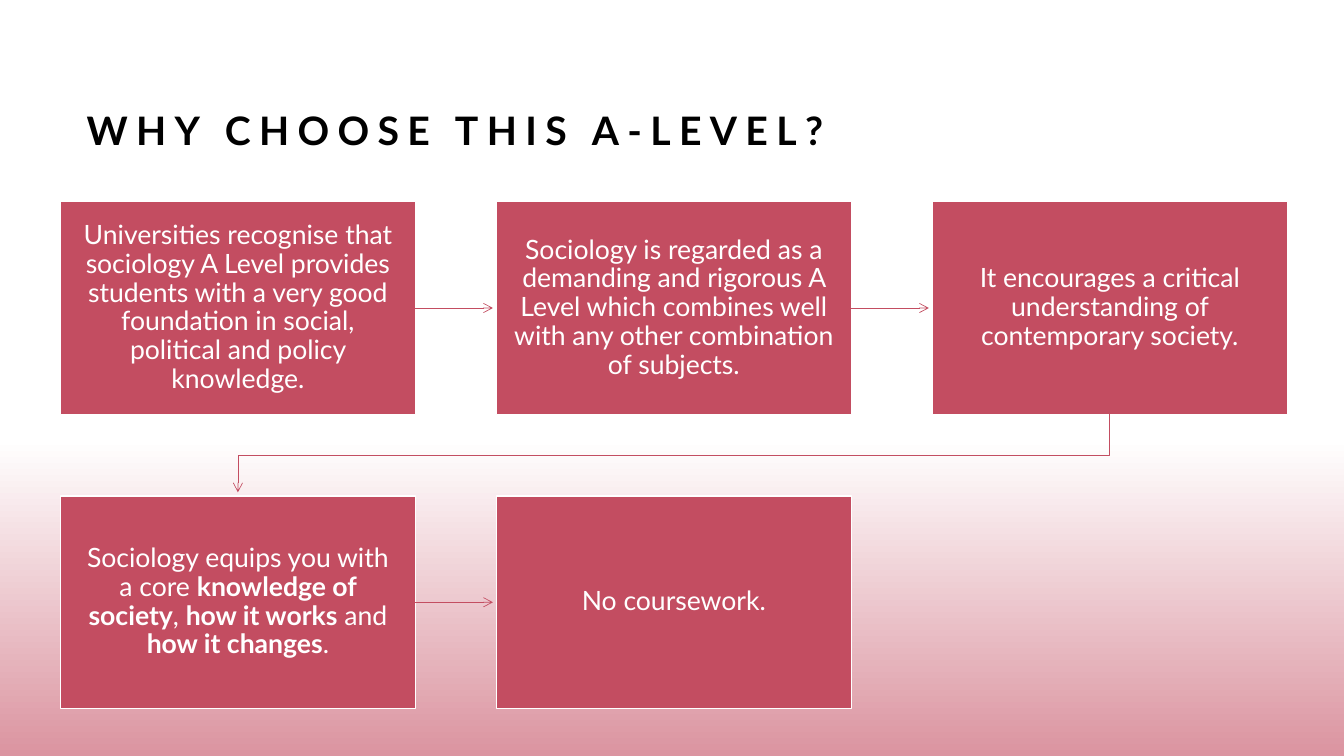
"""Builds a slide of five linked reasons to choose sociology A Level."""
from lxml.etree import SubElement
from pptx import Presentation
from pptx.dml.color import RGBColor
from pptx.enum.shapes import MSO_CONNECTOR as Connector, MSO_SHAPE as Shape
from pptx.enum.text import MSO_ANCHOR as Anchor, MSO_AUTO_SIZE as AutoSize, PP_ALIGN as Align
from pptx.oxml.ns import qn
from pptx.util import Pt

TITLE = "WHY CHOOSE THIS A-LEVEL?"
REASONS = [
    [("Universities recognise that sociology A Level provides students with a very good "
      "foundation in social, political and policy knowledge.", False)],
    [("Sociology is regarded as a demanding and rigorous A Level which combines well "
      "with any other combination of subjects.", False)],
    [("It encourages a critical understanding of contemporary society.", False)],
    [("Sociology equips you with a core ", False), ("knowledge of society", True),
     (", ", False), ("how it works", True), (" and ", False),
     ("how it changes", True), (".", False)],
    [("No coursework.", False)],
]
COLORS = {"rose": "C34D61", "blush": "DB94A0", "white": "FFFFFF", "black": "000000"}
FONT = "Lato"
SLIDE_W, SLIDE_H = 960, 540
FADE_TOP = 276.5
COLUMNS = 3
LEFT, TOP = 43.2, 144
BOX_W, BOX_H = 253.5, 152
STEP_X, STEP_Y = 311.4, 210.2
ARROW_GAP = 2.5


def color(name):
    return RGBColor.from_string(COLORS[name])


def style_arrow(arrow):
    arrow.line.color.rgb = color("rose")
    arrow.line.width = Pt(0.5)
    properties = arrow._element.spPr
    SubElement(properties.find(qn("a:ln")), qn("a:tailEnd"), type="arrow")
    SubElement(properties, qn("a:effectLst"))


def add_fade(slide):
    fade = slide.shapes.add_shape(Shape.RECTANGLE, 0, Pt(FADE_TOP),
                                  Pt(SLIDE_W), Pt(SLIDE_H - FADE_TOP))
    fade.shadow.inherit = False
    fade.line.fill.background()
    fade.fill.gradient()
    fade.fill.gradient_angle = 270
    for stop, name, position in zip(fade.fill.gradient_stops, ("white", "blush"), (0.14, 1)):
        stop.color.rgb = color(name)
        stop.position = position


def add_title(slide):
    title = slide.shapes.title
    title.left, title.top, title.width, title.height = Pt(54.7), Pt(22.3), Pt(810), Pt(90.7)
    frame = title.text_frame
    frame.text = TITLE
    frame.auto_size = AutoSize.NONE
    frame.vertical_anchor = Anchor.BOTTOM
    heading = frame.paragraphs[0]
    heading.alignment = Align.LEFT
    heading.line_spacing = 1.2
    heading.font.name, heading.font.size, heading.font.bold = FONT, Pt(28), True
    heading.font.color.rgb = color("black")
    heading.runs[0].font._element.set("spc", "600")


def add_reason(slide, reason, x, y):
    box = slide.shapes.add_shape(Shape.RECTANGLE, Pt(x), Pt(y), Pt(BOX_W), Pt(BOX_H))
    box.shadow.inherit = False
    box.fill.solid()
    box.fill.fore_color.rgb = color("rose")
    box.line.color.rgb = color("white")
    box.line.width = Pt(1)
    frame = box.text_frame
    frame.word_wrap = True
    frame.vertical_anchor = Anchor.MIDDLE
    frame.margin_left = frame.margin_right = Pt(12.4)
    frame.margin_top = frame.margin_bottom = Pt(13)
    paragraph = frame.paragraphs[0]
    paragraph.alignment = Align.CENTER
    paragraph.line_spacing = 0.9
    paragraph.font.name, paragraph.font.size = FONT, Pt(19)
    paragraph.font.color.rgb = color("white")
    for words, bold in reason:
        run = paragraph.add_run()
        run.text = words
        if bold:
            run.font.bold = True
    return box


def add_step_arrow(slide, box, x, y):
    middle = Pt(y + BOX_H / 2)
    arrow = slide.shapes.add_connector(Connector.STRAIGHT, Pt(x + BOX_W), middle,
                                       Pt(x + STEP_X - ARROW_GAP), middle)
    arrow.begin_connect(box, 3)
    style_arrow(arrow)


def add_row_arrow(slide, x, y):
    start_y, end_y = y + BOX_H, y + STEP_Y
    turn_y = (start_y + end_y) / 2
    start_x, end_x = x + BOX_W / 2, LEFT + BOX_W / 2
    bends = [(start_x, turn_y), (end_x, turn_y), (end_x, end_y - ARROW_GAP)]
    route = slide.shapes.build_freeform(Pt(start_x), Pt(start_y))
    route.add_line_segments([(Pt(px), Pt(py)) for px, py in bends], close=False)
    arrow = route.convert_to_shape()
    arrow.fill.background()
    style_arrow(arrow)


def main():
    deck = Presentation()
    deck.slide_width, deck.slide_height = Pt(SLIDE_W), Pt(SLIDE_H)
    slide = deck.slides.add_slide(deck.slide_layouts[5])
    add_fade(slide)
    add_title(slide)
    for index, reason in enumerate(REASONS):
        row, column = divmod(index, COLUMNS)
        x, y = LEFT + column * STEP_X, TOP + row * STEP_Y
        box = add_reason(slide, reason, x, y)
        if index == len(REASONS) - 1:
            continue
        if column < COLUMNS - 1:
            add_step_arrow(slide, box, x, y)
        else:
            add_row_arrow(slide, x, y)
    deck.save("out.pptx")


if __name__ == "__main__":
    main()
